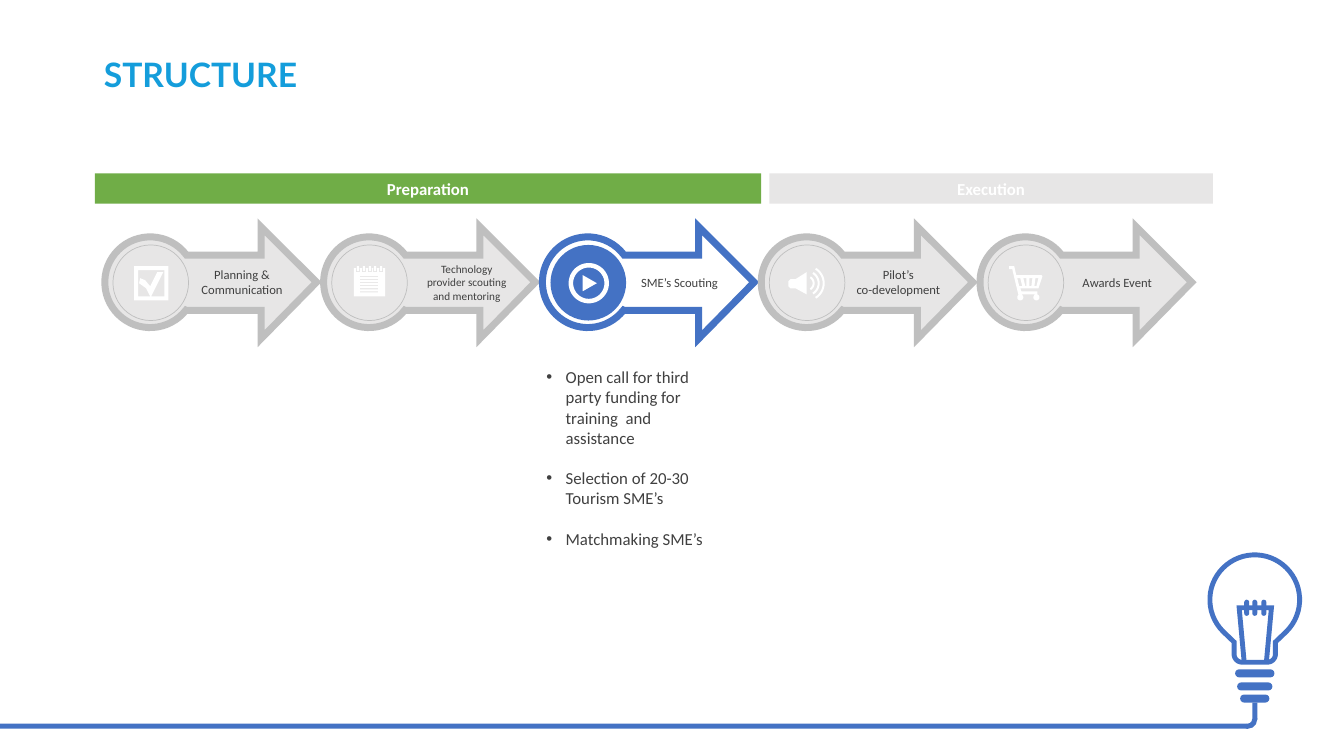
from dataclasses import dataclass
from math import cos, radians, sin

from lxml import etree
from pptx import Presentation
from pptx.dml.color import RGBColor
from pptx.enum.shapes import MSO_SHAPE
from pptx.enum.text import MSO_ANCHOR, MSO_AUTO_SIZE, PP_ALIGN
from pptx.oxml.ns import qn
from pptx.util import Emu, Pt

PX = 9144  # one px is a hundredth of an inch


@dataclass(frozen=True)
class Theme:
    blue: str = "4472C4"
    sky: str = "149DDB"
    green: str = "70AD47"
    pale: str = "E7E6E6"
    grey: str = "BFBFBF"
    ink: str = "404040"
    white: str = "FFFFFF"
    title_font: str = "Lato"
    text_font: str = "Calibri"
    title_size: int = 24
    body_size: int = 12
    label_size: int = 9
    small_size: int = 8


def emu(*lengths):
    return [Emu(round(v * PX)) for v in lengths]


def arc(cx, cy, r, start, end):
    """Points along an arc, in degrees clockwise from the right."""
    steps = max(6, abs(end - start) // 6)
    angles = [radians(start + (end - start) * i / steps) for i in range(steps + 1)]
    return [(cx + r * cos(a), cy + r * sin(a)) for a in angles]


def box(x, y, w, h):
    return [(x, y), (x + w, y), (x + w, y + h), (x, y + h)]


class SlideBuilder:
    def __init__(self, slide, theme):
        self.s = slide
        self.t = theme

    def paint(self, sp, fill=None, line=None, width=1):
        sp.shadow.inherit = False
        if fill:
            sp.fill.solid()
            sp.fill.fore_color.rgb = RGBColor.from_string(fill)
        else:
            sp.fill.background()
        if line:
            sp.line.color.rgb = RGBColor.from_string(line)
            sp.line.width = Pt(width)
            ln = sp._element.spPr.find(qn("a:ln"))
            etree.SubElement(ln, qn("a:miter")).set("lim", "800000")
        else:
            sp.line.fill.background()
        return sp

    def shape(self, kind, x, y, w, h, fill, line=None, width=1, adjust=()):
        sp = self.s.shapes.add_shape(kind, *emu(x, y, w, h))
        for i, value in enumerate(adjust):
            sp.adjustments[i] = value
        return self.paint(sp, fill, line, width)

    def outline(self, contours, fill=None, line=None, width=1, dx=0, dy=0, close=True):
        outlines = [[emu(x + dx, y + dy) for x, y in c] for c in contours]
        fb = self.s.shapes.build_freeform(*outlines[0][0], scale=1.0)
        for i, points in enumerate(outlines):
            if i:
                fb.move_to(*points[0])
            fb.add_line_segments(points[1:], close=close)
        return self.paint(fb.convert_to_shape(), fill, line, width)

    def set_text(self, sp, text, size, color, font=None, bold=False,
                 align=PP_ALIGN.CENTER, anchor=MSO_ANCHOR.MIDDLE):
        tf = sp.text_frame
        tf.text = text
        tf.word_wrap = True
        tf.auto_size = MSO_AUTO_SIZE.NONE
        tf.vertical_anchor = anchor
        for p in tf.paragraphs:
            p.alignment = align
            for r in p.runs:
                r.font.name = font or self.t.text_font
                r.font.size = Pt(size)
                r.font.bold = bold
                r.font.color.rgb = RGBColor.from_string(color)
        return tf

    def label(self, text, x, y, w, h, size):
        sp = self.s.shapes.add_textbox(*emu(x, y, w, h))
        self.set_text(sp, text, size, self.t.ink)

    def bar(self, text, x, y, w, h, fill):
        sp = self.shape(MSO_SHAPE.RECTANGLE, x, y, w, h, fill)
        self.set_text(sp, text, self.t.body_size, self.t.white, bold=True)

    def place(self, sp, x, y, w, h):
        sp.left, sp.top, sp.width, sp.height = emu(x, y, w, h)
        return sp

    def title(self, text, *frame):
        sp = self.place(self.s.shapes.title, *frame)
        self.set_text(sp, text, self.t.title_size, self.t.sky, self.t.title_font,
                      bold=True, align=PP_ALIGN.LEFT)

    def bullets(self, items, *frame):
        sp = self.place(self.s.placeholders[1], *frame)
        tf = self.set_text(sp, "\n".join(items), self.t.body_size, self.t.ink,
                           align=PP_ALIGN.LEFT, anchor=MSO_ANCHOR.TOP)
        indent = emu(19)[0]
        for i, p in enumerate(tf.paragraphs):
            p.space_before = Pt(14.5 if i else 0)
            pPr = p._p.get_or_add_pPr()
            pPr.set("marL", str(indent))
            pPr.set("indent", str(-indent))
            etree.SubElement(pPr, qn("a:buFont")).set("typeface", "Arial")
            etree.SubElement(pPr, qn("a:buChar")).set("char", "•")

    def step(self, text, x, y, icon, active, size, label_x):
        t = self.t
        arrow = [(155, 0), (210, 55), (155, 111), (155, 83), (81, 83),
                 *arc(45, 55, 45, 38, 322), (81, 28), (155, 28)]
        self.outline([arrow], t.white if active else t.pale,
                     t.blue if active else t.grey, 5, x, y)
        self.shape(MSO_SHAPE.OVAL, x + 8, y + 18, 75, 75,
                   t.blue if active else t.pale, None if active else t.grey, 0.5)
        self.outline(icon, t.white, dx=x, dy=y)
        self.label(text, x + label_x, y + 35, 106, 40, size)

    def bulb(self):
        t = self.t
        glass = [*arc(1244.5, 595, 44.5, 135, 405), (1265, 637),
                 *arc(1257, 649, 8, 0, 90), *arc(1232, 649, 8, 90, 180), (1224, 637)]
        self.outline([glass], t.white, t.blue, 3.5)
        # Filament and its three ticks
        self.outline([[(1234, 657), (1229, 603), (1261, 603), (1256, 657)]],
                     line=t.blue, width=3.5, close=False)
        ticks = [(x, 595, 5, 16) for x in (1234, 1242, 1251)]
        # Screw base
        rungs = [(1225, 664, 39, 8), (1227, 677, 35, 8), (1230, 689, 29, 8)]
        for frame in ticks + rungs:
            self.shape(MSO_SHAPE.ROUNDED_RECTANGLE, *frame, t.blue, adjust=[0.5])
        # Cable along the foot of the slide
        self.shape(MSO_SHAPE.RECTANGLE, 0, 718, 1237, 5, t.blue)
        self.shape(MSO_SHAPE.RECTANGLE, 1242, 697, 5, 17, t.blue)
        self.shape(MSO_SHAPE.BLOCK_ARC, 1228, 704, 19, 19, t.blue,
                   adjust=[213.39, 60.92, 0.27])


# Icons, measured from the top left of their arrow
CHECKBOX = [box(29, 39, 34, 34), box(33, 43, 26, 26),
            [(34, 56), (35, 51), (40, 53), (45, 59), (52, 45), (58, 45),
             (46, 69), (45, 69), (41, 61)]]
NOTEPAD = [box(30, 41, 31, 28)]
NOTEPAD += [box(36, y, 18, 1) for y in range(49, 65, 3)]
for ring_x in (34, 40, 46, 51, 57):
    NOTEPAD += [box(ring_x - 2, 41, 4, 4), box(ring_x - 1, 39, 2, 5)]
PLAY = [arc(46, 56, 20, 0, 360), arc(46, 56, 15.5, 0, 360),
        [(40, 48), (54, 56), (40, 64)]]
MEGAPHONE = [[(45, 45), (45, 67), (34, 61), (29, 61), (27, 59), (27, 54),
              (29, 52), (34, 52)]]
MEGAPHONE += [arc(45, 56, r, -58, 58) + arc(45, 56, r - 2, 58, -58)
              for r in (8, 13, 18)]
CART = [[(29, 39), (34, 39), (36, 48), (61, 48), (62, 49), (58, 61), (40, 61),
         (41, 64), (57, 64), (57, 67), (38, 67), (32, 42), (29, 42)],
        [(55, 51), (54, 59), (56, 59), (58, 51)],
        [(49, 51), (49, 59), (51, 59), (52, 51)],
        [(43, 51), (45, 59), (46, 59), (46, 51)],
        [(37, 51), (39, 59), (42, 59), (40, 51)],
        arc(40, 70, 3, 0, 360), arc(56, 70, 3, 0, 360)]


def main():
    prs = Presentation()
    prs.slide_width, prs.slide_height = emu(1333, 750)
    theme = Theme()
    s = SlideBuilder(prs.slides.add_slide(prs.slide_layouts[1]), theme)

    s.bulb()
    s.title("STRUCTURE", 93, 48, 821, 50)

    # Phases
    s.bar("Preparation", 94, 172, 661, 30, theme.green)
    s.bar("Execution", 763, 172, 440, 30, theme.pale)

    # Process steps
    normal, small = theme.label_size, theme.small_size
    steps = [("Planning & Communication", CHECKBOX, False, normal, 83),
             ("Technology provider scouting and mentoring", NOTEPAD, False, small, 89),
             ("SME’s Scouting", PLAY, True, normal, 83),
             ("Pilot’s\nco-development", MEGAPHONE, False, normal, 83),
             ("Awards Event", CART, False, normal, 83)]
    for i, (text, icon, active, size, label_x) in enumerate(steps):
        s.step(text, 104 + 217 * i, 225, icon, active, size, label_x)

    # Details of the current step
    s.bullets(["Open call for third party funding for training  and assistance",
               "Selection of 20-30 Tourism SME’s", "Matchmaking SME’s"],
              532, 359, 177, 212)

    prs.save("out.pptx")


if __name__ == "__main__":
    main()
